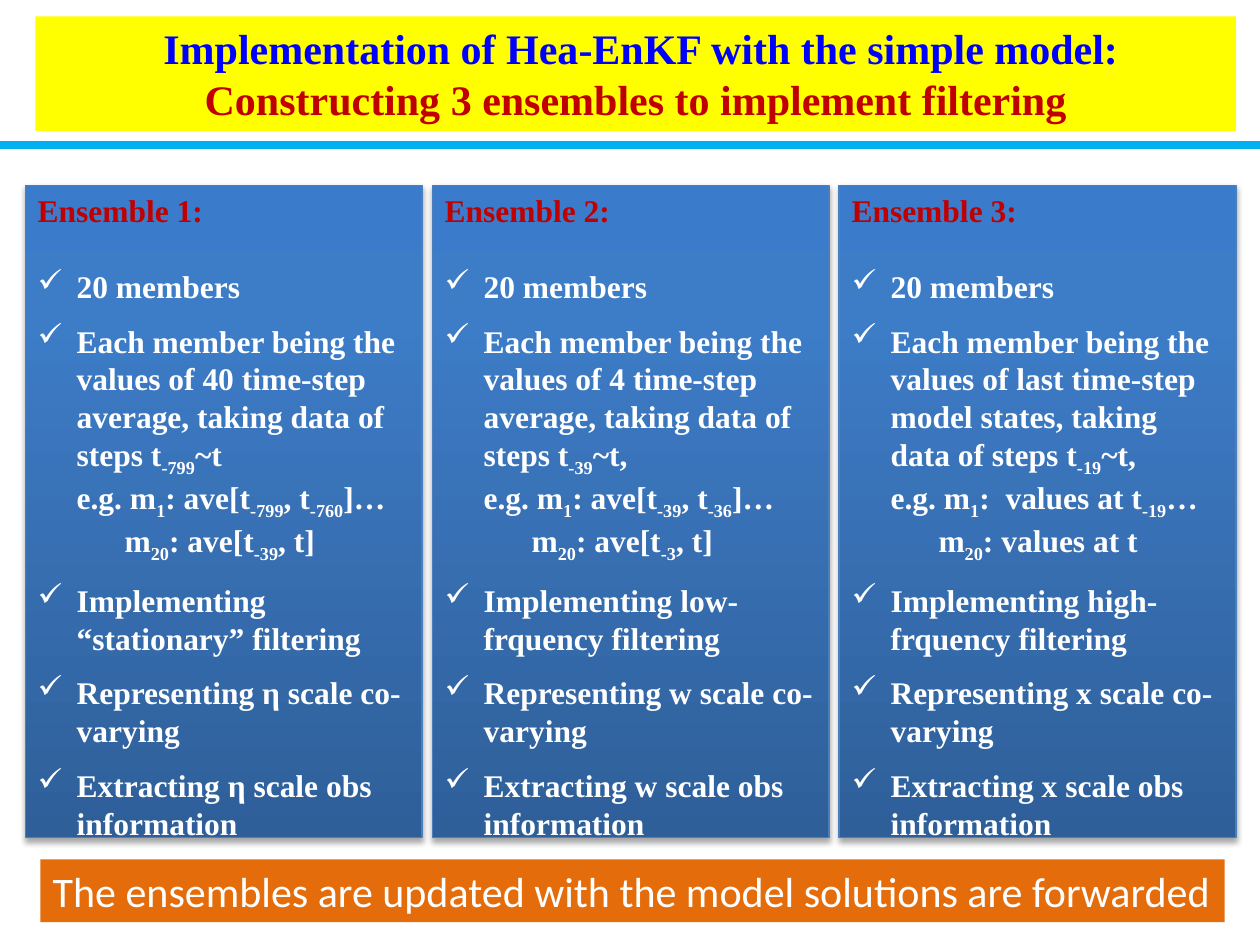
from dataclasses import dataclass

from lxml import etree
from pptx import Presentation
from pptx.dml.color import RGBColor
from pptx.enum.shapes import MSO_CONNECTOR, MSO_SHAPE
from pptx.enum.text import MSO_ANCHOR, MSO_AUTO_SIZE, PP_ALIGN
from pptx.oxml.ns import qn
from pptx.util import Inches, Pt

RECTANGLE = MSO_SHAPE.RECTANGLE
STRAIGHT = MSO_CONNECTOR.STRAIGHT
TOP = MSO_ANCHOR.TOP
NO_AUTOFIT = MSO_AUTO_SIZE.NONE
LEFT, CENTER = PP_ALIGN.LEFT, PP_ALIGN.CENTER


@dataclass(frozen=True)
class Theme:
    title_fill: str = "FFFF00"
    title_text: str = "0000FF"
    accent: str = "C00000"
    rule: str = "00B0F0"
    panel_line: str = "4B7EBC"
    panel_stops: tuple = ((0, "2F5F99"), (80, "3D7CC7"), (100, "3A7CCB"))
    shadow: str = "000000"
    footer_fill: str = "E46C0A"
    light_text: str = "FFFFFF"
    serif: str = "Times New Roman"
    sans: str = "Calibri"
    large: int = 24
    body: int = 18


THEME = Theme()


def rgb(value):
    return RGBColor.from_string(value)


def write(frame, text, *, size=THEME.body, color=THEME.light_text, font=THEME.serif,
          bold=True, align=LEFT, after=0, indent=0, bullet=None):
    """Add one paragraph to the frame; text in {braces} is set as subscript."""
    paragraph = frame.paragraphs[0]
    if paragraph.runs:
        paragraph = frame.add_paragraph()
    paragraph.alignment = align
    paragraph.space_after = Pt(after)
    properties = paragraph._p.get_or_add_pPr()
    properties.set("marL", str(Inches(indent)))
    properties.set("indent", str(-Inches(indent) if bullet else 0))
    if bullet:
        etree.SubElement(properties, qn("a:buChar"), char=bullet)
    for index, part in enumerate(text.replace("}", "{").split("{")):
        if not part:
            continue
        run = paragraph.add_run()
        run.text = part
        run.font.name = font
        run.font.size = Pt(size)
        run.font.bold = bold
        run.font.color.rgb = rgb(color)
        if index % 2:
            run.font._element.set("baseline", "-25000")


presentation = Presentation()
presentation.slide_width = Inches(10)
presentation.slide_height = Inches(7.5)
slide = presentation.slides.add_slide(presentation.slide_layouts[5])

# Title and the rule below it
title = slide.shapes.title
title.left, title.top = Inches(0.28), Inches(0.13)
title.width, title.height = Inches(9.53), Inches(0.91)
title.fill.solid()
title.fill.fore_color.rgb = rgb(THEME.title_fill)
title.text_frame.vertical_anchor = TOP
title.text_frame.auto_size = NO_AUTOFIT
title.text_frame.word_wrap = True
for line, color in (
    (" Implementation of Hea-EnKF with the simple model:", THEME.title_text),
    ("Constructing 3 ensembles to implement filtering", THEME.accent),
):
    write(title.text_frame, line, size=THEME.large, color=color, align=CENTER)

rule = slide.shapes.add_connector(STRAIGHT, Inches(0), Inches(1.15), Inches(10), Inches(1.15))
rule.line.color.rgb = rgb(THEME.rule)
rule.line.width = Pt(5)
etree.SubElement(rule._element.spPr, qn("a:effectLst"))

# One panel per ensemble: member text, first and last example, filter, scale
ensembles = (
    ("values of 40 time-step average, taking data of steps t{-799}~t",
     "e.g. m{1}: ave[t{-799}, t{-760}]…", "m{20}: ave[t{-39}, t]",
     "“stationary”", "η"),
    ("values of 4 time-step average, taking data of steps t{-39}~t,",
     "e.g. m{1}: ave[t{-39}, t{-36}]…", "m{20}: ave[t{-3}, t]",
     "low-frquency", "w"),
    ("values of last time-step model states, taking data of steps t{-19}~t,",
     "e.g. m{1}:  values at t{-19}…", "m{20}: values at t",
     "high-frquency", "x"),
)
PANEL_LEFT, PANEL_PITCH = 0.2, 3.23
HEADING_GAP, ITEM_GAP = 21.5, 9.7
BULLET_INDENT, LAST_MEMBER_INDENT = 0.31, 0.69

for number, (members, first, last, filtering, scale) in enumerate(ensembles, start=1):
    panel = slide.shapes.add_shape(
        RECTANGLE, Inches(PANEL_LEFT + (number - 1) * PANEL_PITCH), Inches(1.47),
        Inches(3.15), Inches(5.18))
    panel.line.color.rgb = rgb(THEME.panel_line)
    panel.line.width = Pt(0.75)

    panel.fill.gradient()
    panel.fill.gradient_angle = 90
    stops = panel._element.spPr.find(qn("a:gradFill")).find(qn("a:gsLst"))
    for stop in list(stops):
        stops.remove(stop)
    for position, color in THEME.panel_stops:
        stop = etree.SubElement(stops, qn("a:gs"), pos=str(position * 1000))
        etree.SubElement(stop, qn("a:srgbClr"), val=color)

    effects = etree.SubElement(panel._element.spPr, qn("a:effectLst"))
    shadow = etree.SubElement(
        effects, qn("a:outerShdw"), blurRad=str(Pt(3.1)), dist=str(Pt(1.8)),
        dir="5400000", rotWithShape="0")
    shadow_color = etree.SubElement(shadow, qn("a:srgbClr"), val=THEME.shadow)
    etree.SubElement(shadow_color, qn("a:alpha"), val="35000")

    frame = panel.text_frame
    frame.word_wrap = True
    frame.vertical_anchor = TOP
    write(frame, f"Ensemble {number}:", color=THEME.accent, after=HEADING_GAP)
    for text, indent, bullet, after in (
        ("20 members", BULLET_INDENT, "✓", ITEM_GAP),
        (f"Each member being the {members}", BULLET_INDENT, "✓", 0),
        (first, BULLET_INDENT, None, 0),
        (last, LAST_MEMBER_INDENT, None, ITEM_GAP),
        (f"Implementing {filtering} filtering", BULLET_INDENT, "✓", ITEM_GAP),
        (f"Representing {scale} scale co-varying", BULLET_INDENT, "✓", ITEM_GAP),
        (f"Extracting {scale} scale obs information", BULLET_INDENT, "✓", 0),
    ):
        write(frame, text, indent=indent, bullet=bullet, after=after)

# Closing statement
footer = slide.shapes.add_shape(RECTANGLE, Inches(0.32), Inches(6.82), Inches(9.4), Inches(0.5))
footer.shadow.inherit = False
footer.fill.solid()
footer.fill.fore_color.rgb = rgb(THEME.footer_fill)
footer.line.fill.background()
footer.text_frame.word_wrap = False
footer.text_frame.vertical_anchor = TOP
write(footer.text_frame, "The ensembles are updated with the model solutions are forwarded",
      size=THEME.large, font=THEME.sans, bold=False)

presentation.save("out.pptx")
